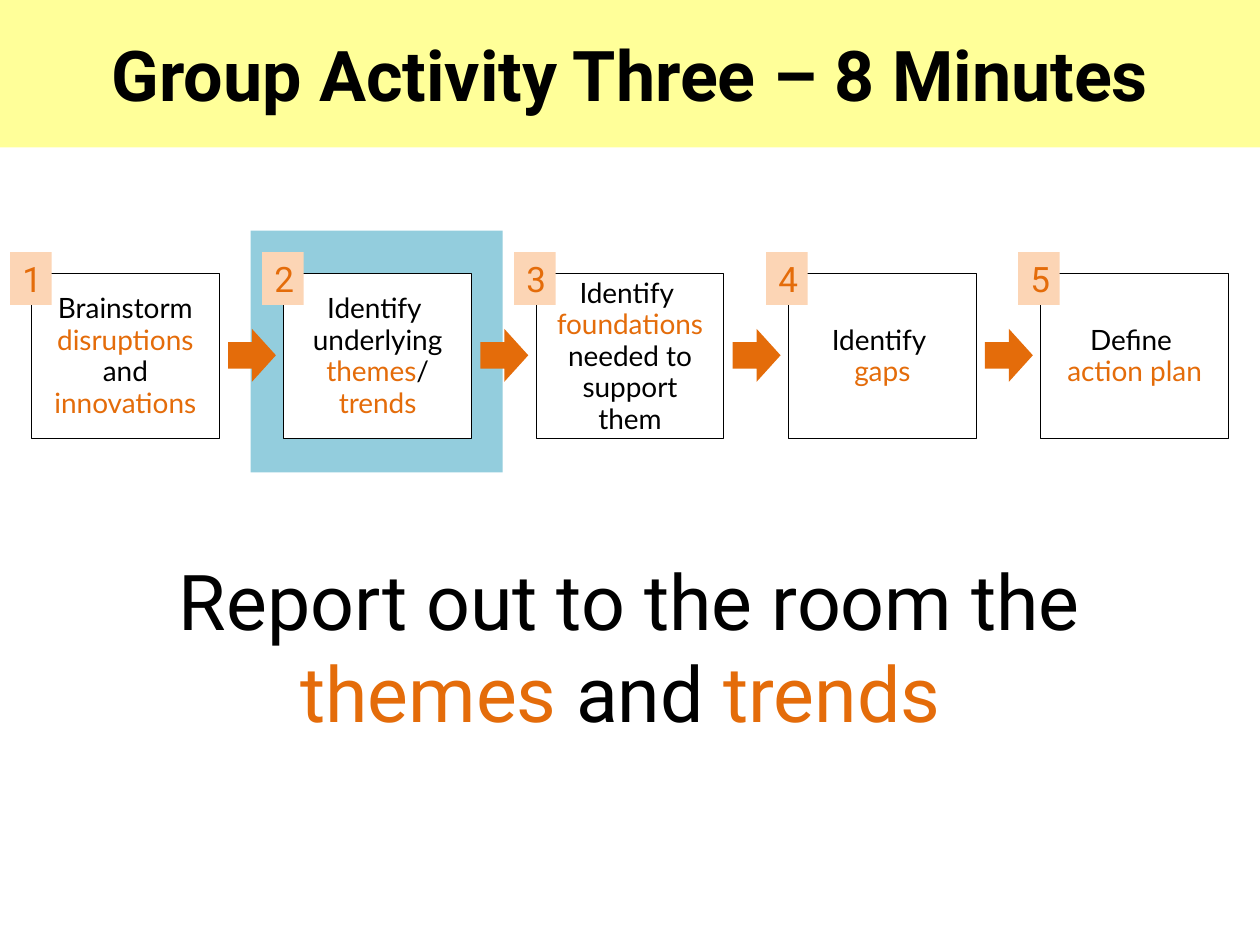
from pptx import Presentation
from pptx.dml.color import RGBColor
from pptx.enum.shapes import MSO_SHAPE as Shape
from pptx.enum.text import MSO_ANCHOR as Anchor, PP_ALIGN as Align
from pptx.util import Inches, Pt

BLACK = RGBColor(0x00, 0x00, 0x00)
WHITE = RGBColor(0xFF, 0xFF, 0xFF)
ORANGE = RGBColor(0xE4, 0x6C, 0x0A)
PEACH = RGBColor(0xFC, 0xD5, 0xB5)
YELLOW = RGBColor(0xFF, 0xFF, 0x99)
BLUE = RGBColor(0x93, 0xCD, 0xDD)

STEP_PITCH = 2.0025
STEPS = [
    [("Brainstorm ", BLACK), ("disruptions", ORANGE), (" and ", BLACK), ("innovations", ORANGE)],
    [("Identify \nunderlying", BLACK), (" themes", ORANGE), ("/ ", BLACK), ("trends", ORANGE)],
    [("Identify \n", BLACK), ("foundations", ORANGE), (" needed to support them", BLACK)],
    [("Identify \n", BLACK), ("gaps", ORANGE)],
    [("Define \n", BLACK), ("action plan", ORANGE)],
]
TASK = [("Report out to the room the ", BLACK), ("themes", ORANGE), (" and ", BLACK), ("trends ", ORANGE)]


def add_filled(page, kind, left, top, width, height, fill, outline=None):
    shape = page.shapes.add_shape(kind, Inches(left), Inches(top), Inches(width), Inches(height))
    shape.shadow.inherit = False
    shape.fill.solid()
    shape.fill.fore_color.rgb = fill
    if outline is None:
        shape.line.fill.background()
    else:
        shape.line.color.rgb = outline
        shape.line.width = Pt(0.75)
    return shape


def write(shape, spans, font, size, bold=False, spacing=None, anchor=Anchor.MIDDLE):
    """Fill a shape with one centred paragraph of (text, colour) spans."""
    frame = shape.text_frame
    frame.word_wrap = True
    frame.vertical_anchor = anchor
    para = frame.paragraphs[0]
    para.alignment = Align.CENTER
    para.line_spacing = spacing
    for text, color in spans:
        for index, piece in enumerate(text.split("\n")):
            if index:
                para.add_line_break()
            if piece:
                span = para.add_run()
                span.text = piece
                span.font.name = font
                span.font.size = Pt(size)
                span.font.bold = bold
                span.font.color.rgb = color


def add_title(page, text):
    banner = add_filled(page, Shape.RECTANGLE, 0, 0, 10, 1.17, YELLOW)
    write(banner, [(text, BLACK)], "Roboto", 40, bold=True)


def add_task(page):
    box = page.shapes.add_textbox(Inches(0.5), Inches(4.34), Inches(9), Inches(1.58))
    write(box, TASK, "Roboto", 44, anchor=Anchor.TOP)


def add_step(page, index, spans):
    box = add_filled(page, Shape.RECTANGLE, 0.25 + index * STEP_PITCH, 2.17, 1.49, 1.31, WHITE, BLACK)
    write(box, spans, "Lato", 16, spacing=Pt(18))


def add_arrow(page, index):
    add_filled(page, Shape.RIGHT_ARROW, 1.81 + index * STEP_PITCH, 2.61, 0.38, 0.42, ORANGE)


def add_badge(page, index):
    badge = add_filled(page, Shape.RECTANGLE, 0.08 + index * 2, 2, 0.33, 0.42, PEACH)
    write(badge, [(str(index + 1), ORANGE)], "Roboto", 20)


def main():
    deck = Presentation()
    deck.slide_width, deck.slide_height = Inches(10), Inches(7.5)
    page = deck.slides.add_slide(deck.slide_layouts[6])

    add_filled(page, Shape.RECTANGLE, 1.99, 1.83, 2, 1.92, BLUE)
    add_task(page)
    add_title(page, "Group Activity Three – 8 Minutes")
    for index, spans in enumerate(STEPS):
        add_step(page, index, spans)
    for index in range(len(STEPS) - 1):
        add_arrow(page, index)
    for index in range(len(STEPS)):
        add_badge(page, index)

    deck.save("out.pptx")


if __name__ == "__main__":
    main()
